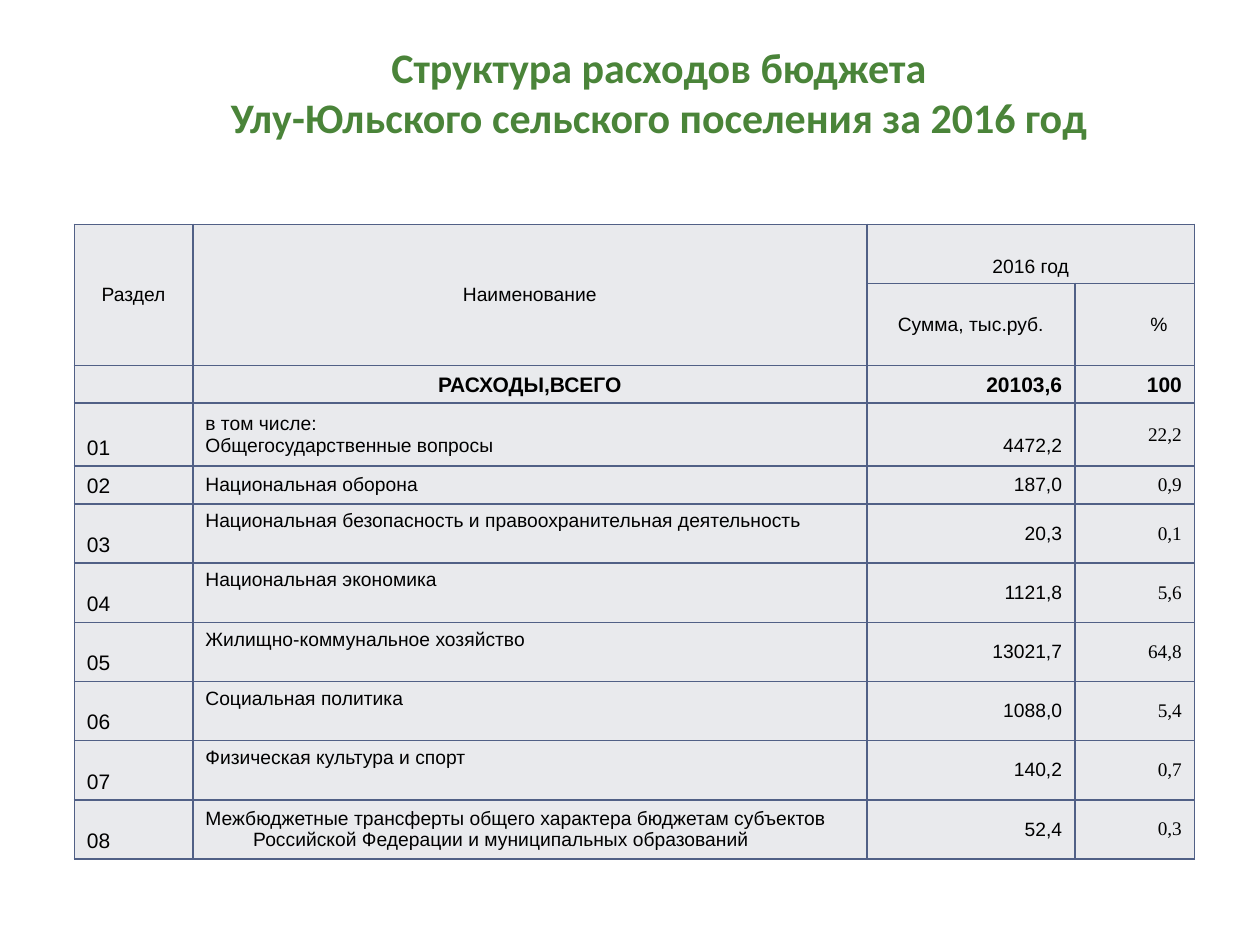
from lxml.etree import SubElement
from pptx import Presentation
from pptx.dml.color import RGBColor
from pptx.enum.text import MSO_ANCHOR as ANCHOR, PP_ALIGN as ALIGN
from pptx.oxml.ns import qn
from pptx.util import Inches, Pt

GREEN = RGBColor(0x4A, 0x84, 0x39)
PALE = RGBColor(0xE9, 0xEA, 0xED)
BLUE = RGBColor(0x51, 0x60, 0x86)
BLACK = RGBColor(0, 0, 0)
HANG = Inches(0.38)

COLUMNS = [0.94, 5.35, 1.65, 0.95]
ROWS = [0.47, 0.65, 0.3, 0.5, 0.3] + [0.47] * 6
EXPENSES = [
    ("01", "в том числе:\nОбщегосударственные вопросы", "4472,2", "22,2"),
    ("02", "Национальная оборона", "187,0", "0,9"),
    ("03", "Национальная безопасность и правоохранительная деятельность", "20,3", "0,1"),
    ("04", "Национальная экономика", "1121,8", "5,6"),
    ("05", "Жилищно-коммунальное хозяйство", "13021,7", "64,8"),
    ("06", "Социальная политика", "1088,0", "5,4"),
    ("07", "Физическая культура и спорт", "140,2", "0,7"),
    ("08", "Межбюджетные трансферты общего характера бюджетам субъектов "
           "Российской Федерации и муниципальных образований", "52,4", "0,3"),
]

deck = Presentation()
deck.slide_width, deck.slide_height = Inches(10), Inches(7.5)
page = deck.slides.add_slide(deck.slide_layouts[5])

title = page.shapes.title
title.left, title.top = Inches(0.98), Inches(0.28)
title.width, title.height = Inches(8.5), Inches(1.25)
title.text_frame.text = "Структура расходов бюджета\vУлу-Юльского сельского поселения за 2016 год"
title.text_frame.vertical_anchor = ANCHOR.TOP
heading = title.text_frame.paragraphs[0]
heading.alignment = ALIGN.CENTER
heading.font.name, heading.font.size, heading.font.bold = "Calibri", Pt(24), True
heading.font.color.rgb = GREEN

table = page.shapes.add_table(len(ROWS), len(COLUMNS), Inches(0.59), Inches(1.78),
                              Inches(sum(COLUMNS)), Inches(sum(ROWS))).table
table.first_row = table.horz_banding = False
for column, width in zip(table.columns, COLUMNS):
    column.width = Inches(width)
for row, height in zip(table.rows, ROWS):
    row.height = Inches(height)

for cell in table.iter_cells():
    properties = cell._tc.get_or_add_tcPr()
    for side in ("a:lnL", "a:lnR", "a:lnT", "a:lnB"):
        line = SubElement(properties, qn(side), w=str(Pt(1)))
        SubElement(SubElement(line, qn("a:solidFill")), qn("a:srgbClr"), val=str(BLUE))
    cell.fill.solid()
    cell.fill.fore_color.rgb = PALE
    cell.text_frame.paragraphs[0].font.size = Pt(11)


def write(row, column, text, align=ALIGN.CENTER, anchor=ANCHOR.MIDDLE,
          size=11, bold=False, font="Arial", indent=HANG):
    cell = table.cell(row, column)
    cell.vertical_anchor = anchor
    cell.text_frame.text = text
    for para in cell.text_frame.paragraphs:
        para.alignment = align
        para.font.name, para.font.size, para.font.bold = font, Pt(size), bold
        para.font.color.rgb = BLACK
        layout = para._p.get_or_add_pPr()
        layout.set("marL", str(indent))
        layout.set("indent", str(-HANG))
    return cell


table.cell(0, 0).merge(table.cell(1, 0))
table.cell(0, 1).merge(table.cell(1, 1))
table.cell(0, 2).merge(table.cell(0, 3))
write(0, 0, "Раздел")
write(0, 1, "Наименование")
write(0, 2, "2016 год", anchor=ANCHOR.BOTTOM)
write(1, 2, "Сумма, тыс.руб.")
write(1, 3, "%", ALIGN.LEFT, indent=Inches(0.88))

for column, text in enumerate(["РАСХОДЫ,ВСЕГО", "20103,6", "100"], start=1):
    align = ALIGN.CENTER if column == 1 else ALIGN.RIGHT
    write(2, column, text, align, ANCHOR.BOTTOM, size=12, bold=True)

for row, (section, name, amount, share) in enumerate(EXPENSES, start=3):
    name_anchor = ANCHOR.TOP if "03" <= section <= "07" else ANCHOR.MIDDLE
    write(row, 0, section, ALIGN.LEFT, ANCHOR.BOTTOM, size=12)
    write(row, 1, name, ALIGN.LEFT, name_anchor)
    amount_cell = write(row, 2, amount, ALIGN.RIGHT)
    if "\n" in name:
        amount_cell.vertical_anchor = ANCHOR.BOTTOM
        amount_cell.margin_bottom = Inches(0.08)
    write(row, 3, share, ALIGN.RIGHT, font="Times New Roman")

deck.save("out.pptx")
